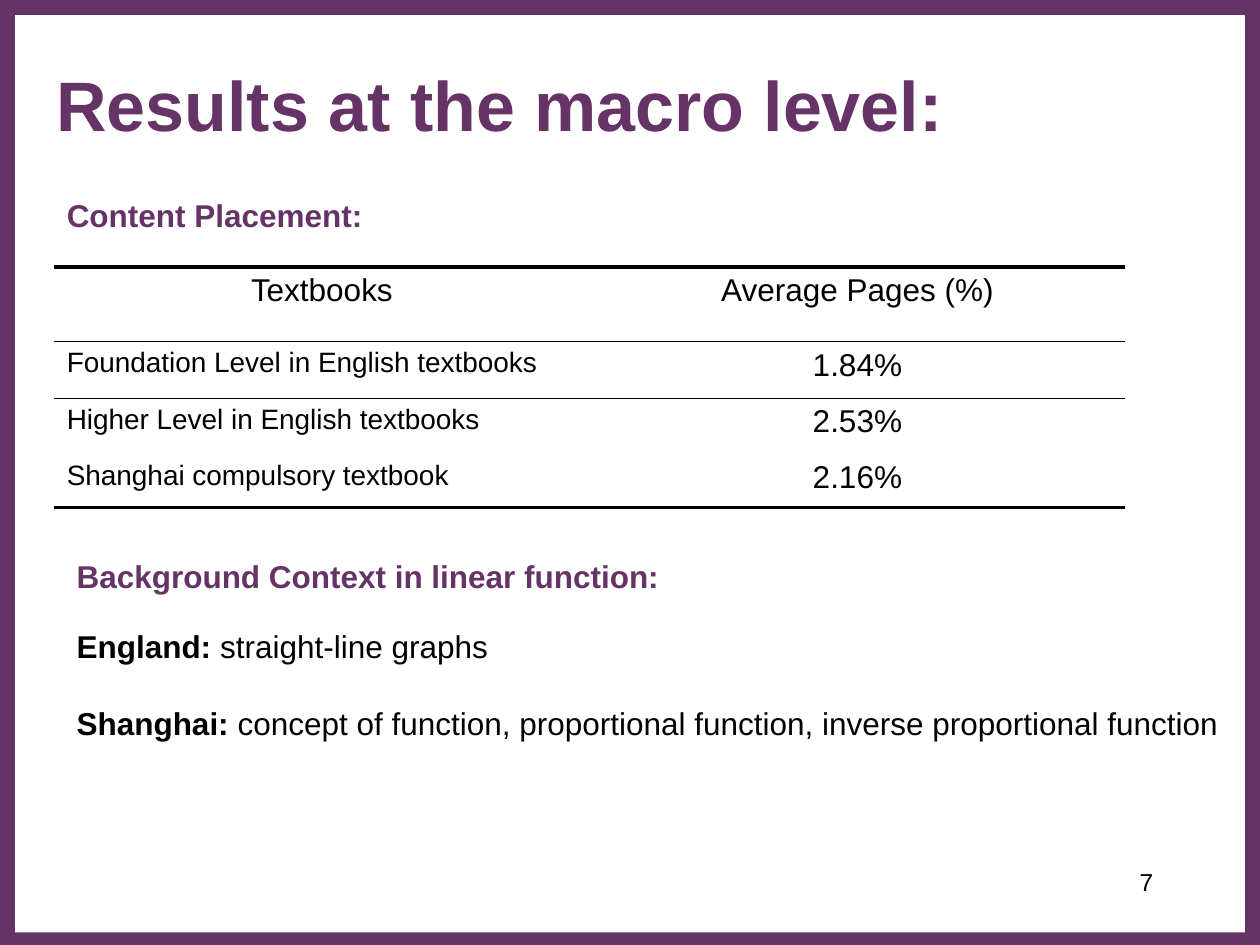
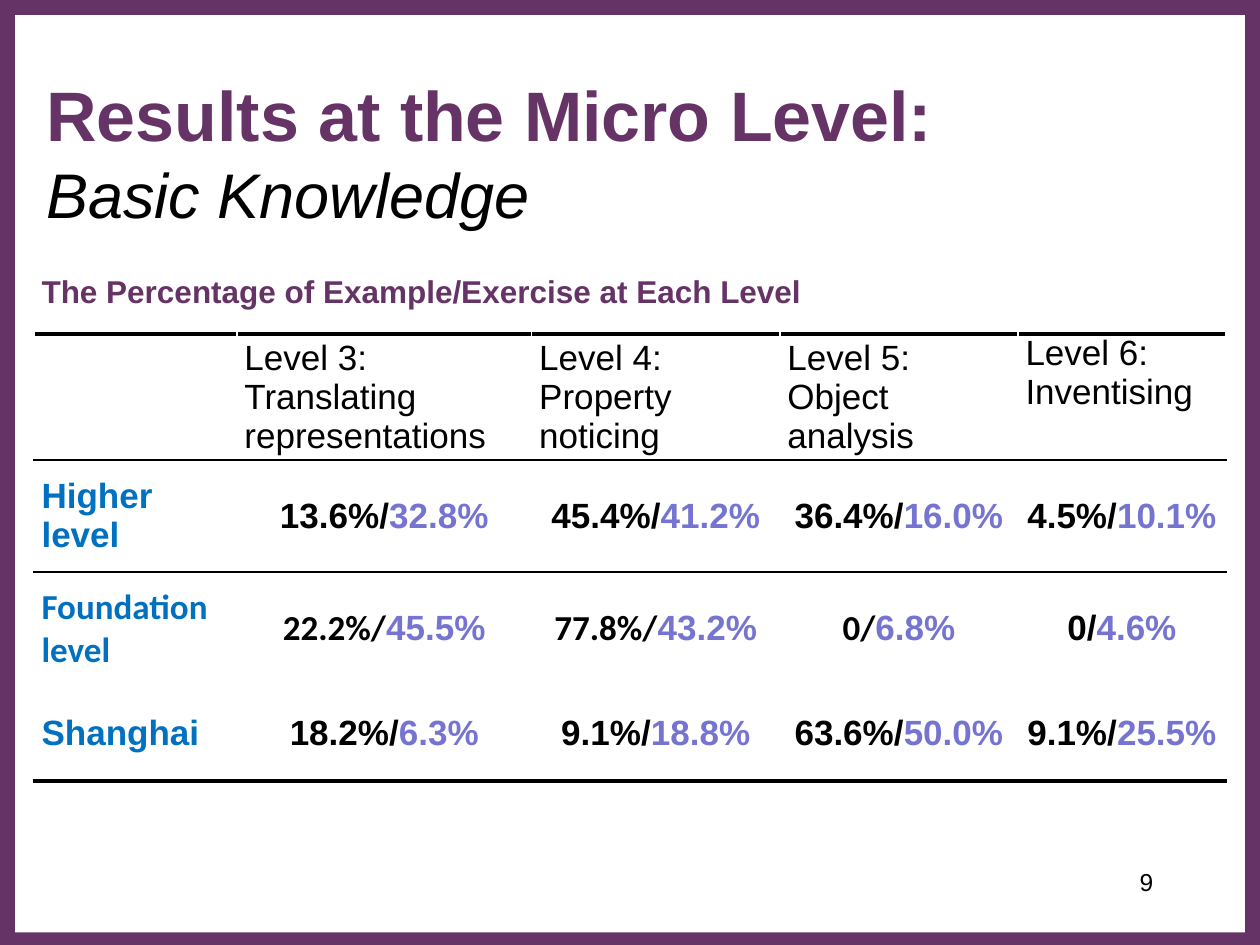
from lxml.etree import SubElement
from pptx import Presentation
from pptx.dml.color import RGBColor
from pptx.enum.shapes import MSO_SHAPE as Shape
from pptx.enum.text import MSO_ANCHOR as Anchor, PP_ALIGN as Align
from pptx.oxml.ns import qn
from pptx.util import Inches, Pt

PURPLE = RGBColor(0x66, 0x33, 0x66)
WHITE = RGBColor(0xFF, 0xFF, 0xFF)
BLACK = RGBColor(0, 0, 0)
BLUE = RGBColor(0x00, 0x70, 0xC0)
LILAC = RGBColor(0x75, 0x75, 0xD1)

NO_TABLE_STYLE = "{2D5ABB26-0587-4C30-8999-92F81FD0307C}"
TITLE = dict(size=Pt(40), bold=True, color=PURPLE)
HEADING = dict(size=Pt(18), bold=True, color=PURPLE)
BODY = dict(size=Pt(18))
BODY_BOLD = dict(size=Pt(18), bold=True)
LABEL = dict(size=Pt(16))
LEVEL = dict(size=Pt(20))
GROUP = dict(size=Pt(20), bold=True, color=BLUE)
EXAMPLE = dict(size=Pt(20), bold=True)
EXERCISE = dict(size=Pt(20), bold=True, color=LILAC)
CENTRED = dict(alignment=Align.CENTER)
TIGHT = dict(margin_left=Inches(0.06), margin_right=Inches(0.06),
             margin_top=0, margin_bottom=0)


def apply(target, formats):
    for attribute, value in formats.items():
        setattr(target, attribute, value)


def line(text, font, **layout):
    return [(text, font)], layout


class Deck:
    font_name = "Arial"

    def __init__(self):
        self.presentation = Presentation()
        apply(self.presentation, dict(slide_width=Inches(10), slide_height=Inches(7.5)))
        self.slide = None

    def add_slide(self, number):
        blank = self.presentation.slide_layouts[6]
        self.slide = self.presentation.slides.add_slide(blank)
        self.panel((0, 0, 10, 7.5), PURPLE)
        self.panel((0.12, 0.12, 9.76, 7.28), WHITE)
        self.text((7.17, 6.83, 2.08, 0.5),
                  [line(number, dict(size=Pt(14)), alignment=Align.RIGHT)])

    def panel(self, box, color):
        panel = self.slide.shapes.add_shape(Shape.RECTANGLE, *map(Inches, box))
        panel.shadow.inherit = False
        panel.fill.solid()
        panel.fill.fore_color.rgb = color
        panel.line.fill.background()

    def text(self, box, lines):
        frame = self.slide.shapes.add_textbox(*map(Inches, box)).text_frame
        frame.word_wrap = True
        self.fill_frame(frame, lines)

    def fill_frame(self, frame, lines):
        for index, (runs, layout) in enumerate(lines):
            paragraph = frame.add_paragraph() if index else frame.paragraphs[0]
            apply(paragraph, layout)
            for words, font in runs:
                run = paragraph.add_run()
                run.text = words
                formats = dict(dict(name=self.font_name, color=BLACK, bold=False), **font)
                run.font.color.rgb = formats.pop("color")
                apply(run.font, formats)

    def border(self, cell, side, width, color):
        edge = SubElement(cell._tc.get_or_add_tcPr(), qn(f"a:ln{side}"), w=str(Pt(width)))
        fill = SubElement(edge, qn("a:solidFill"))
        SubElement(fill, qn("a:srgbClr"), val=str(color))

    def table(self, box, widths, heights, heading, rows, rules, cell_format, dividers=False):
        frame = self.slide.shapes.add_table(len(heights), len(widths), *map(Inches, box))
        table = frame.table
        frame._element.find(".//" + qn("a:tableStyleId")).text = NO_TABLE_STYLE
        apply(table, dict(first_row=False, horz_banding=False))
        for column, width in zip(table.columns, widths):
            column.width = Inches(width)
        for row, height in zip(table.rows, heights):
            row.height = Inches(height)
        table.cell(0, 0).merge(table.cell(0, len(widths) - 1))
        contents = [[[heading]] + [[]] * (len(widths) - 1)] + rows
        for r, row in enumerate(contents):
            for c, lines in enumerate(row):
                cell = table.cell(r, c)
                apply(cell, cell_format)
                if dividers and r:
                    for side in "LR":
                        self.border(cell, side, 1, WHITE)
                for side, boundary in (("T", r), ("B", r + 1)):
                    if boundary in rules:
                        self.border(cell, side, rules[boundary], BLACK)
                cell.fill.solid()
                cell.fill.fore_color.rgb = WHITE
                self.fill_frame(cell.text_frame, lines)
        return table


def share_pair(pair, example_font):
    example, exercise = pair.split("/")
    return [([(example + "/", dict(EXAMPLE, name=example_font)), (exercise, EXERCISE)], CENTRED)]


def macro_slide(deck):
    deck.add_slide("7")
    deck.text((0.35, 0.44, 7.32, 0.77), [line("Results at the macro level:", TITLE)])
    average_pages = [
        ("Foundation Level in English textbooks", "1.84%"),
        ("Higher Level in English textbooks", "2.53%"),
        ("Shanghai compulsory textbook", "2.16%"),
    ]
    header = [[line(name, BODY, **CENTRED)] for name in ("Textbooks", "Average Pages (%)")]
    rows = [[[line(book, LABEL)], [line(share, BODY, **CENTRED)]]
            for book, share in average_pages]
    deck.table((0.43, 1.53, 8.5, 2.5), [4.25] * 2, [0.59, 0.59, 0.45, 0.44, 0.43],
               line("Content Placement:", HEADING), [header] + rows,
               {1: 2.25, 2: 0.5, 5: 2.25}, {})
    deck.text((0.51, 4.22, 9.49, 1.72), [
        line("Background Context in linear function:", HEADING, line_spacing=1.5),
        ([("England: ", BODY_BOLD), ("straight-line graphs", BODY)],
         dict(space_before=Pt(18.5))),
        ([("Shanghai: ", BODY_BOLD),
          ("concept of function, proportional function, inverse proportional function", BODY)],
         dict(space_before=Pt(22.5))),
    ])


def micro_slide(deck):
    deck.add_slide("9")
    deck.text((0.27, 0.52, 8.75, 1.38), [
        line("Results at the Micro Level:", TITLE),
        line("Basic Knowledge", dict(size=Pt(36), italic=True)),
    ])
    levels = [
        ["Level 3: Translating representations"],
        ["Level 4: Property noticing"],
        ["Level 5:", "Object analysis"],
        ["Level 6: Inventising"],
    ]
    arial, calibri = "Arial", "Calibri"
    groups = [
        ("Higher level", arial, ["13.6%/32.8%", "45.4%/41.2%", "36.4%/16.0%", "4.5%/10.1%"]),
        ("Foundation level", calibri, ["22.2%/45.5%", "77.8%/43.2%", "0/6.8%", "0/4.6%"]),
        ("Shanghai", arial, ["18.2%/6.3%", "9.1%/18.8%", "63.6%/50.0%", "9.1%/25.5%"]),
    ]
    header = [[]] + [[line(part, LEVEL) for part in level] for level in levels]
    rows = []
    for group, font, pairs in groups:
        pair_fonts = [font] * 3 + [arial]
        rows.append([[line(group, dict(GROUP, name=font))]]
                    + [share_pair(*pair) for pair in zip(pairs, pair_fonts)])
    table = deck.table((0.27, 2.18, 9.46, 4.02), [1.61, 2.34, 1.97, 1.89, 1.65],
                       [0.47, 1, 0.89, 0.9, 0.76],
                       line("The Percentage of Example/Exercise at Each Level", HEADING),
                       [header] + rows, {1: 2.25, 2: 0.75, 5: 2.25},
                       dict(TIGHT, vertical_anchor=Anchor.MIDDLE), dividers=True)
    for top_cell in (table.cell(0, 0), table.cell(1, 4)):
        top_cell.vertical_anchor = Anchor.TOP


def main():
    deck = Deck()
    macro_slide(deck)
    micro_slide(deck)
    deck.presentation.save("out.pptx")


if __name__ == "__main__":
    main()
